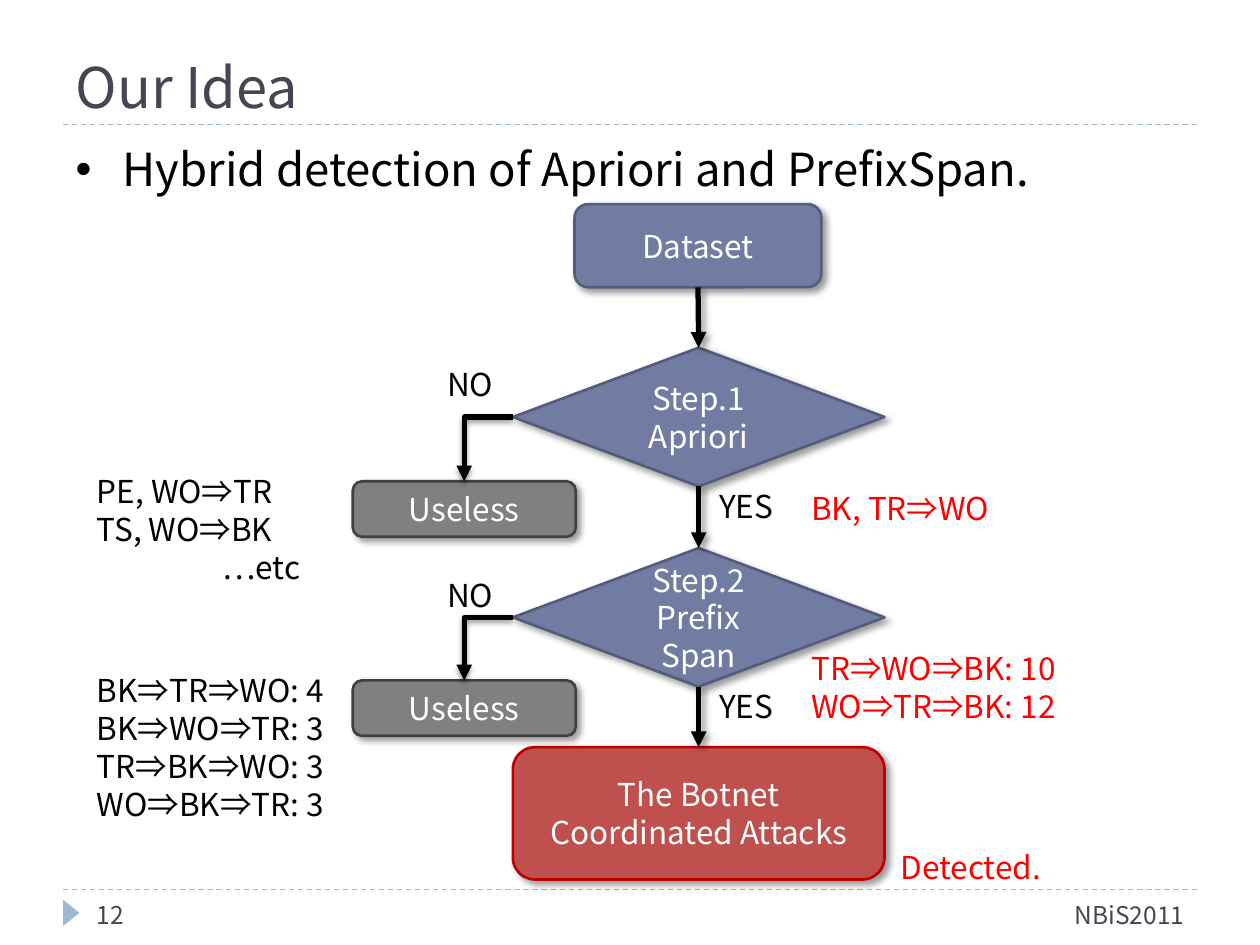
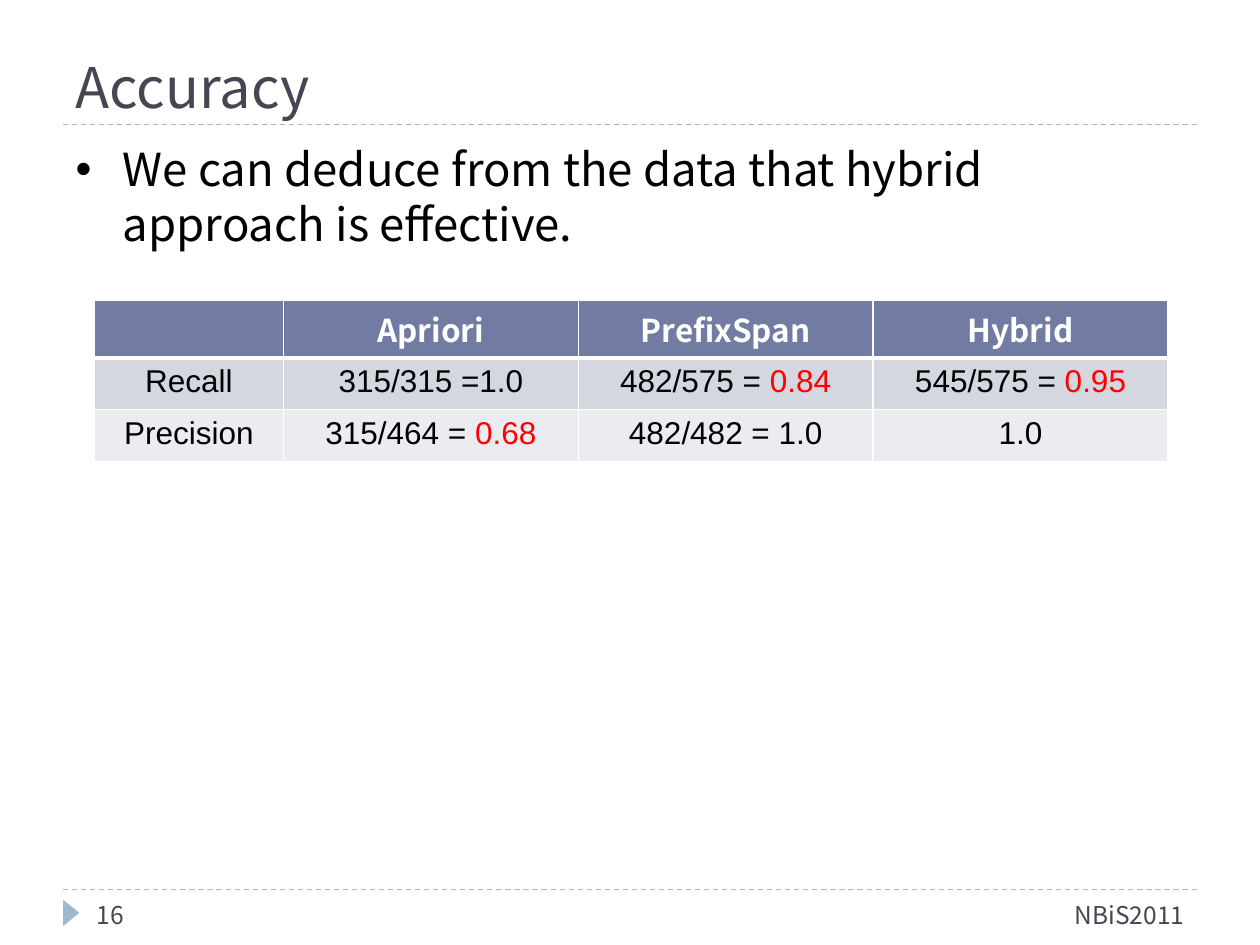
from dataclasses import dataclass

from lxml.etree import SubElement
from pptx import Presentation
from pptx.dml.color import RGBColor
from pptx.enum.dml import MSO_LINE
from pptx.enum.shapes import MSO_CONNECTOR, MSO_SHAPE
from pptx.enum.text import MSO_ANCHOR, MSO_AUTO_SIZE, PP_ALIGN
from pptx.oxml.ns import qn
from pptx.util import Inches, Pt

SANS = "Noto Sans CJK JP"
BLACK, WHITE, RED = "000000", "FFFFFF", "FF0000"
SLATE, INDIGO, INDIGO_EDGE, PALE_BLUE = "464653", "727CA3", "545C79", "9FB8CD"
GRAY, GRAY_EDGE, BRICK, BRICK_EDGE = "808080", "404040", "C0504D", "C00000"
ROW_FILLS = (INDIGO, "D5D7E0", "EBECF0")
TOP, LEFT, BOTTOM = 0, 1, 2  # connection sites


@dataclass(frozen=True)
class TextStyle:
    size: float = 18
    color: str = BLACK
    font: str = SANS
    bold: bool = False


@dataclass(frozen=True)
class Node:
    name: str
    text: str
    preset: MSO_SHAPE
    area: tuple[float, float, float, float]
    fill: str = INDIGO
    edge: str = INDIGO_EDGE


@dataclass(frozen=True)
class Label:
    text: str
    area: tuple[float, float, float, float]
    color: str = BLACK


TITLE = TextStyle(32, SLATE)
BODY = TextStyle(26)
FOOTER = TextStyle(14, SLATE)
NODE_TEXT = TextStyle(color=WHITE)
HEADER_CELL = TextStyle(color=WHITE, bold=True)
CELL = TextStyle(font="Arial")
RED_CELL = TextStyle(color=RED, font="Arial")

NODES = (
    Node("dataset", "Dataset", MSO_SHAPE.FLOWCHART_ALTERNATE_PROCESS, (4.56, 1.62, 1.96, 0.66)),
    Node("apriori", "Step.1\nApriori", MSO_SHAPE.FLOWCHART_DECISION, (4.07, 2.76, 2.95, 1.1)),
    Node("useless 1", "Useless", MSO_SHAPE.ROUNDED_RECTANGLE, (2.8, 3.82, 1.77, 0.44),
         GRAY, GRAY_EDGE),
    Node("prefixspan", "Step.2\nPrefix\nSpan", MSO_SHAPE.FLOWCHART_DECISION,
         (4.07, 4.35, 2.95, 1.1)),
    Node("useless 2", "Useless", MSO_SHAPE.ROUNDED_RECTANGLE, (2.8, 5.4, 1.77, 0.44),
         GRAY, GRAY_EDGE),
    Node("botnet", "The Botnet\nCoordinated Attacks", MSO_SHAPE.FLOWCHART_ALTERNATE_PROCESS,
         (4.07, 5.93, 2.95, 1.05), BRICK, BRICK_EDGE),
)
YES_FLOW = ("dataset", "apriori", "prefixspan", "botnet")
NO_FLOW = (("apriori", "useless 1"), ("prefixspan", "useless 2"))

LABELS = (
    Label("YES", (5.61, 3.82, 1.08, 0.4)),
    Label("YES", (5.61, 5.4, 1.08, 0.4)),
    Label("NO", (3.45, 2.85, 1.08, 0.4)),
    Label("NO", (3.45, 4.52, 1.08, 0.4)),
    Label("BK, TR⇒WO", (6.34, 3.83, 2.36, 0.4), RED),
    Label("TR⇒WO⇒BK: 10\nWO⇒TR⇒BK: 12", (6.34, 5.1, 2.83, 1.01), RED),
    Label("Detected.", (7.05, 6.68, 2.36, 0.4), RED),
    Label("BK⇒TR⇒WO: 4\nBK⇒WO⇒TR: 3\nTR⇒BK⇒WO: 3\nWO⇒BK⇒TR: 3", (0.67, 5.28, 2.28, 1.62)),
)

# Each cell is a plain part, optionally followed by a highlighted part.
ACCURACY = (
    (("",), ("Apriori",), ("PrefixSpan",), ("Hybrid",)),
    (("Recall",), ("315/315 =1.0",), ("482/575 = ", "0.84"), ("545/575 = ", "0.95")),
    (("Precision",), ("315/464 = ", "0.68"), ("482/482 = 1.0",), ("1.0",)),
)
COLUMN_WIDTHS = (1.5, 2.34, 2.34, 2.34)


def rgb(value: str) -> RGBColor:
    return RGBColor.from_string(value)


def inches(area: tuple) -> list:
    return [Inches(length) for length in area]


def style_run(span, style: TextStyle) -> None:
    span.font.size = Pt(style.size)
    span.font.bold = style.bold
    span.font.color.rgb = rgb(style.color)
    span.font.name = style.font
    SubElement(span._r.get_or_add_rPr(), qn("a:ea"), typeface=style.font)


def write(frame, text: str, style: TextStyle, align=PP_ALIGN.LEFT, anchor=MSO_ANCHOR.TOP) -> None:
    frame.text = text
    frame.word_wrap = True
    frame.auto_size = MSO_AUTO_SIZE.NONE
    frame.vertical_anchor = anchor
    for para in frame.paragraphs:
        para.alignment = align
        para.space_before = Pt(0)
        for span in para.runs:
            style_run(span, style)


def add_text(page, text: str, area: tuple, style: TextStyle, **layout):
    box = page.shapes.add_textbox(*inches(area))
    write(box.text_frame, text, style, **layout)
    return box


def set_shadow(shape, blur: float = 0, distance: float = 0, angle: int = 0) -> None:
    """Replace the theme shadow; without a blur the shape has none."""
    effects = SubElement(shape.element.spPr, qn("a:effectLst"))
    if blur:
        outer = SubElement(effects, qn("a:outerShdw"), blurRad=str(Pt(blur)),
                           dist=str(Pt(distance)), dir=str(angle * 60000), rotWithShape="0")
        color = SubElement(outer, qn("a:srgbClr"), val=BLACK)
        SubElement(color, qn("a:alpha"), val="40000")


def add_bullet(para) -> None:
    properties = para._p.get_or_add_pPr()
    properties.set("marL", str(Inches(0.3)))
    properties.set("indent", str(-Inches(0.3)))
    color = SubElement(properties, qn("a:buClr"))
    SubElement(color, qn("a:srgbClr"), val=INDIGO)
    SubElement(properties, qn("a:buSzPct"), val="76000")
    SubElement(properties, qn("a:buChar"), char="▶")


def add_rule(page, top: float) -> None:
    rule = page.shapes.add_connector(MSO_CONNECTOR.STRAIGHT, *inches((0.5, top, 9.5, top)))
    rule.line.color.rgb = rgb(PALE_BLUE)
    rule.line.width = Pt(0.75)
    rule.line.dash_style = MSO_LINE.DASH
    set_shadow(rule)


def place(placeholder, area: tuple) -> None:
    placeholder.left, placeholder.top, placeholder.width, placeholder.height = inches(area)


def add_page(deck, title: str, statement: str, number: int):
    """Add a slide with its title, bulleted statement, rules and footer."""
    page = deck.slides.add_slide(deck.slide_layouts[1])
    heading, body = page.placeholders
    place(heading, (0.5, 0.17, 9, 0.83))
    write(heading.text_frame, title, TITLE, anchor=MSO_ANCHOR.BOTTOM)
    place(body, (0.5, 1.07, 9, 5.98))
    add_bullet(body.text_frame.paragraphs[0])
    write(body.text_frame, statement, BODY)

    for top in (7.06, 0.99):
        add_rule(page, top)
    marker = page.shapes.add_shape(MSO_SHAPE.ISOSCELES_TRIANGLE, *inches((0.46, 7.18, 0.21, 0.13)))
    marker.rotation = 90
    marker.fill.solid()
    marker.fill.fore_color.rgb = rgb(PALE_BLUE)
    marker.line.fill.background()
    set_shadow(marker)
    add_text(page, "NBiS2011", (7, 7.06, 2.5, 0.4), FOOTER,
             align=PP_ALIGN.RIGHT, anchor=MSO_ANCHOR.MIDDLE)
    add_text(page, str(number), (0.67, 7.06, 2.17, 0.4), FOOTER, anchor=MSO_ANCHOR.MIDDLE)
    return page


def add_node(page, node: Node):
    shape = page.shapes.add_shape(node.preset, *inches(node.area))
    shape.fill.solid()
    shape.fill.fore_color.rgb = rgb(node.fill)
    shape.line.color.rgb = rgb(node.edge)
    shape.line.width = Pt(1.5)
    set_shadow(shape, 4, 3, 45)
    write(shape.text_frame, node.text, NODE_TEXT, PP_ALIGN.CENTER, MSO_ANCHOR.MIDDLE)
    return shape


def add_arrow(page, source, target, branch: bool = False) -> None:
    """Link two nodes downwards, or from the left side when it is a branch."""
    kind = MSO_CONNECTOR.ELBOW if branch else MSO_CONNECTOR.STRAIGHT
    arrow = page.shapes.add_connector(kind, 0, 0, 0, 0)
    arrow.begin_connect(source, LEFT if branch else BOTTOM)
    arrow.end_connect(target, TOP)
    arrow.line.color.rgb = rgb(BLACK)
    arrow.line.width = Pt(3)
    SubElement(arrow.line._get_or_add_ln(), qn("a:tailEnd"), type="triangle")
    if branch:
        arrow.element.spPr.find(qn("a:prstGeom")).set("prst", "bentConnector2")
        set_shadow(arrow, 3, 2, 90)
    else:
        set_shadow(arrow, 4, 3, 45)


def add_flowchart(page) -> None:
    shapes = {node.name: add_node(page, node) for node in NODES}
    for source, target in zip(YES_FLOW, YES_FLOW[1:]):
        add_arrow(page, shapes[source], shapes[target])
    for source, target in NO_FLOW:
        add_arrow(page, shapes[source], shapes[target], branch=True)
    for label in LABELS:
        add_text(page, label.text, label.area, TextStyle(color=label.color))
    rejected = add_text(page, "PE, WO⇒TR\nTS, WO⇒BK\n…etc", (0.67, 3.7, 1.81, 1.31), TextStyle())
    rejected.text_frame.paragraphs[-1].alignment = PP_ALIGN.RIGHT


def set_borders(cell, top: float, bottom: float) -> None:
    properties = cell._tc.get_or_add_tcPr()
    for side, width in (("L", 1), ("R", 1), ("T", top), ("B", bottom)):
        border = SubElement(properties, qn(f"a:ln{side}"), w=str(Pt(width)))
        fill = SubElement(border, qn("a:solidFill"))
        SubElement(fill, qn("a:srgbClr"), val=WHITE)


def add_accuracy_table(page) -> None:
    table = page.shapes.add_table(len(ACCURACY), len(COLUMN_WIDTHS),
                                  *inches((0.75, 2.38, 8.5, 1.22))).table
    for column, width in zip(table.columns, COLUMN_WIDTHS):
        column.width = Inches(width)
    for row_index, parts_row in enumerate(ACCURACY):
        table.rows[row_index].height = Inches(0.41)
        for column_index, parts in enumerate(parts_row):
            cell = table.cell(row_index, column_index)
            set_borders(cell, top=3 if row_index == 1 else 1, bottom=3 if row_index == 0 else 1)
            cell.fill.solid()
            cell.fill.fore_color.rgb = rgb(ROW_FILLS[row_index])
            para = cell.text_frame.paragraphs[0]
            para.alignment = PP_ALIGN.CENTER
            styles = (CELL if row_index else HEADER_CELL, RED_CELL)
            for text, style in zip(parts, styles):
                if text:
                    span = para.add_run()
                    span.text = text
                    style_run(span, style)


def main() -> None:
    deck = Presentation()
    deck.slide_width, deck.slide_height = Inches(10), Inches(7.5)
    add_flowchart(add_page(deck, "Our Idea", "Hybrid detection of Apriori and PrefixSpan.", 12))
    add_accuracy_table(add_page(
        deck, "Accuracy", "We can deduce from the data that hybrid approach is effective.", 16))
    deck.save("out.pptx")


if __name__ == "__main__":
    main()
